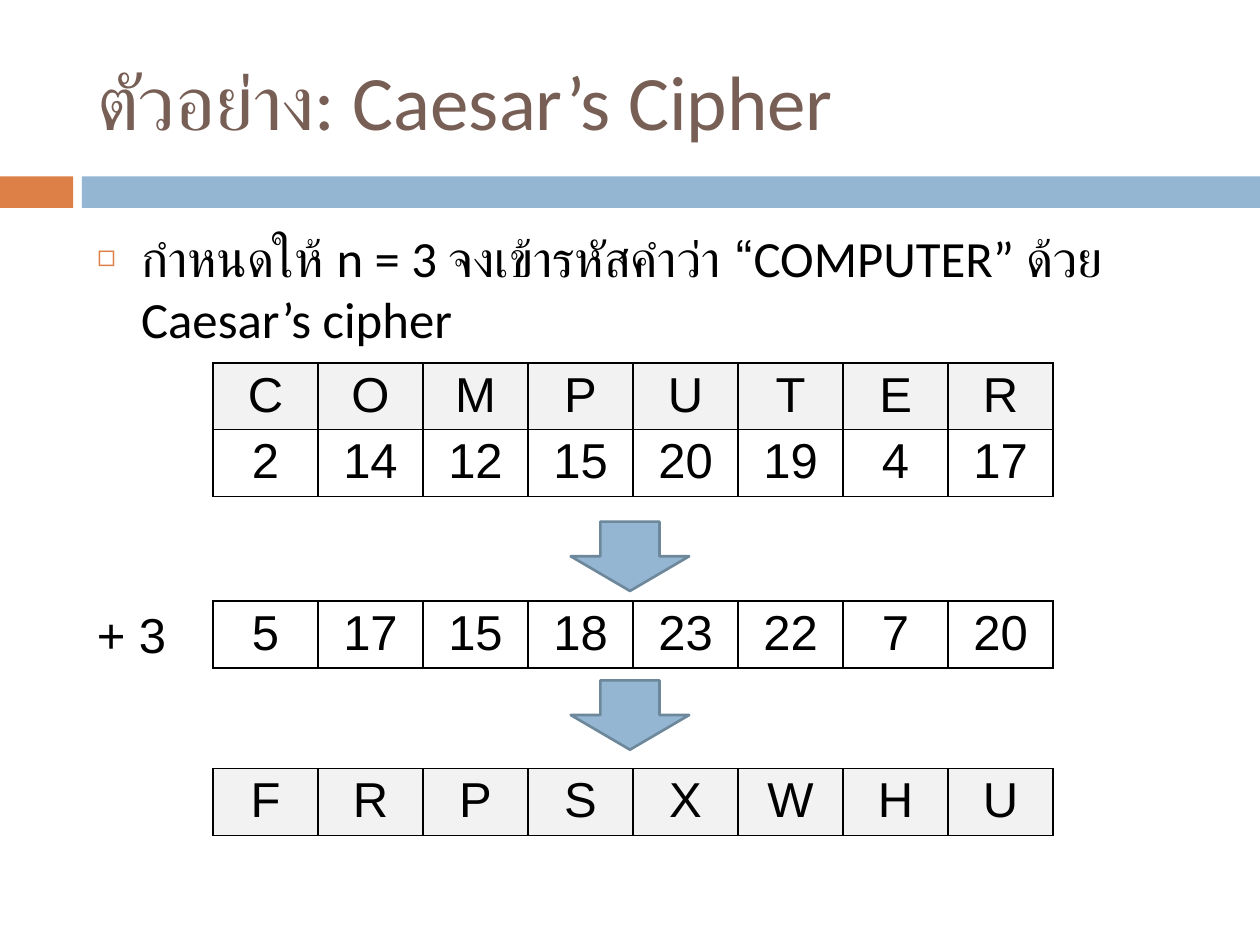
from dataclasses import dataclass

from lxml import etree
from pptx import Presentation
from pptx.dml.color import RGBColor
from pptx.enum import shapes, text
from pptx.oxml import ns
from pptx.util import Inches, Pt


@dataclass(frozen=True)
class Theme:
    heading_font: str = "Calibri"
    cell_font: str = "Arial"
    title_size: int = 44
    body_size: int = 29
    cell_size: int = 28
    brown: str = "775F55"
    orange: str = "DD8047"
    blue: str = "94B6D2"
    outline: str = "6D879B"
    black: str = "000000"
    shade: str = "F2F2F2"


def add_xml(parent, tag, **attributes):
    return etree.SubElement(parent, ns.qn(tag), attributes)


class Builder:
    def __init__(self, page, theme):
        self.page = page
        self.theme = theme

    def style(self, para, font, size, color, align=text.PP_ALIGN.LEFT):
        para.alignment = align
        para.font.name = font
        para.font.size = Pt(size)
        para.font.color.rgb = RGBColor.from_string(color)

    def place(self, holder, left, top, width, height):
        holder.left, holder.top = Inches(left), Inches(top)
        holder.width, holder.height = Inches(width), Inches(height)
        holder.text_frame.auto_size = text.MSO_AUTO_SIZE.NONE

    def title(self, words, *bounds):
        holder = self.page.shapes.title
        self.place(holder, *bounds)
        holder.text_frame.text = words
        holder.text_frame.vertical_anchor = text.MSO_ANCHOR.MIDDLE
        self.style(holder.text_frame.paragraphs[0], self.theme.heading_font,
                   self.theme.title_size, self.theme.brown)

    def body(self, words, *bounds):
        holder = self.page.placeholders[1]
        self.place(holder, *bounds)
        holder.text_frame.text = words
        para = holder.text_frame.paragraphs[0]
        para.space_before = Pt(7)
        properties = para._p.get_or_add_pPr()
        properties.set("marL", str(Inches(0.35)))
        properties.set("indent", str(Inches(-0.35)))
        add_xml(add_xml(properties, "a:buClr"), "a:srgbClr", val=self.theme.orange)
        add_xml(properties, "a:buSzPct", val="60000")
        add_xml(properties, "a:buChar", char="◻")
        self.style(para, self.theme.heading_font, self.theme.body_size, self.theme.black)

    def shape(self, kind, fill, *bounds, outline=None):
        shape = self.page.shapes.add_shape(kind, *map(Inches, bounds))
        shape.shadow.inherit = False
        shape.fill.solid()
        shape.fill.fore_color.rgb = RGBColor.from_string(fill)
        if outline:
            shape.line.color.rgb = RGBColor.from_string(outline)
            shape.line.width = Pt(1.5)
        else:
            shape.line.fill.background()

    def bar(self, fill, left, width):
        self.shape(shapes.MSO_SHAPE.RECTANGLE, fill, left, 1.4, width, 0.25)

    def arrow(self, top):
        self.shape(shapes.MSO_SHAPE.DOWN_ARROW, self.theme.blue, 4.53, top, 0.94, 0.55,
                   outline=self.theme.outline)

    def label(self, words, *bounds):
        box = self.page.shapes.add_textbox(*map(Inches, bounds))
        box.text_frame.word_wrap = False
        box.text_frame.auto_size = text.MSO_AUTO_SIZE.SHAPE_TO_FIT_TEXT
        box.text_frame.text = words
        self.style(box.text_frame.paragraphs[0], self.theme.cell_font,
                   self.theme.cell_size, self.theme.black)

    def table(self, rows, top):
        columns, row_height = len(rows[0]), 0.53
        table = self.page.shapes.add_table(
            len(rows), columns, Inches(1.69), Inches(top),
            Inches(6.67), Inches(row_height * len(rows))).table
        table.first_row = table.horz_banding = False
        for row, values in zip(table.rows, rows):
            row.height = Inches(row_height)
            for cell, value in zip(row.cells, values):
                self.cell(cell, value)

    def cell(self, cell, value):
        cell.text = str(value)
        cell.margin_top = cell.margin_bottom = Inches(0.04)
        self.style(cell.text_frame.paragraphs[0], self.theme.cell_font,
                   self.theme.cell_size, self.theme.black, text.PP_ALIGN.CENTER)
        properties = cell._tc.get_or_add_tcPr()
        for side in ("a:lnL", "a:lnR", "a:lnT", "a:lnB"):
            line = add_xml(properties, side, w=str(Pt(1)))
            add_xml(add_xml(line, "a:solidFill"), "a:srgbClr", val=self.theme.black)
        if isinstance(value, str):
            cell.fill.solid()
            cell.fill.fore_color.rgb = RGBColor.from_string(self.theme.shade)
        else:
            cell.fill.background()


def main():
    deck = Presentation()
    deck.slide_width, deck.slide_height = Inches(10), Inches(7.5)
    theme = Theme()
    builder = Builder(deck.slides.add_slide(deck.slide_layouts[1]), theme)

    word, shift = "COMPUTER", 3
    codes = [ord(letter) - ord("A") for letter in word]
    shifted = [(code + shift) % 26 for code in codes]
    cipher = [chr(code + ord("A")) for code in shifted]

    builder.bar(theme.orange, 0, 0.58)
    builder.bar(theme.blue, 0.65, 9.35)
    builder.title("ตัวอย่าง: Caesar’s Cipher", 0.67, 0.25, 8.92, 1.08)
    builder.body(f"กำหนดให้ n = {shift} จงเข้ารหัสคำว่า “{word}” ด้วย Caesar’s cipher",
                 0.67, 1.75, 8.92, 4.92)
    builder.table([list(word), codes], 2.88)
    builder.table([shifted], 4.77)
    builder.table([cipher], 6.1)
    builder.label(f"+ {shift}", 0.67, 4.75, 0.76, 0.57)
    for top in (4.14, 5.4):
        builder.arrow(top)
    deck.save("out.pptx")


if __name__ == "__main__":
    main()
